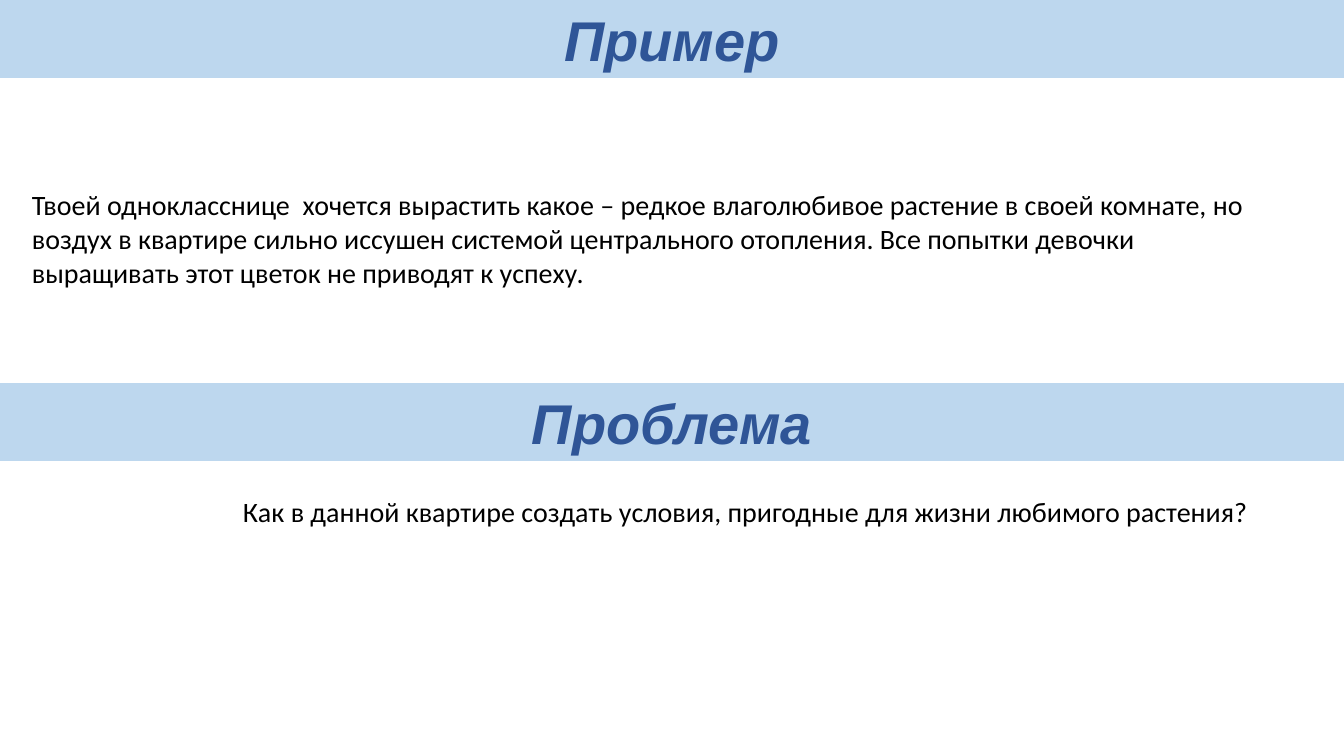
"""Build a slide with an example and the problem it poses."""
from dataclasses import dataclass

from pptx import Presentation
from pptx.dml.color import RGBColor
from pptx.enum.shapes import MSO_SHAPE
from pptx.enum.text import MSO_ANCHOR, PP_ALIGN
from pptx.util import Emu, Pt

SECTIONS = [
    {
        "heading": "Пример",
        "top": 0,
        "body": "Твоей однокласснице  хочется вырастить какое – редкое влаголюбивое "
                "растение в своей комнате, но воздух в квартире сильно иссушен системой "
                "центрального отопления. Все попытки девочки выращивать этот цветок "
                "не приводят к успеху.",
        "box": (22, 183, 1273, 112),
        "wrap": True,
    },
    {
        "heading": "Проблема",
        "top": 383,
        "body": "Как в данной квартире создать условия, пригодные для жизни "
                "любимого растения?",
        "box": (233, 490, 1033, 44),
        "wrap": False,
    },
]

SLIDE_WIDTH, SLIDE_HEIGHT = 1344, 756
BAND_HEIGHT = 78
EMU_PER_PX = 12192000 / SLIDE_WIDTH
BLANK_LAYOUT = 6
RECTANGLE = MSO_SHAPE.RECTANGLE
LEFT, CENTER = PP_ALIGN.LEFT, PP_ALIGN.CENTER
TOP, MIDDLE = MSO_ANCHOR.TOP, MSO_ANCHOR.MIDDLE


@dataclass(frozen=True)
class Theme:
    """Colours, fonts and type sizes."""
    band: RGBColor = RGBColor.from_string("BDD7EE")
    heading: RGBColor = RGBColor.from_string("2F5597")
    body: RGBColor = RGBColor.from_string("000000")
    heading_font: str = "Arial"
    body_font: str = "Calibri"
    heading_size: int = 40
    body_size: int = 20


THEME = Theme()


def px(length):
    """Turn pixels into EMU."""
    return Emu(round(length * EMU_PER_PX))


def write_text(shape, text, *, font, size, color, bold=False, italic=False,
               align=LEFT, anchor=TOP, wrap=True):
    """Put one formatted paragraph into a shape."""
    frame = shape.text_frame
    frame.word_wrap = wrap
    frame.vertical_anchor = anchor
    paragraph = frame.paragraphs[0]
    paragraph.alignment = align
    run = paragraph.add_run()
    run.text = text
    run.font.name = font
    run.font.size = Pt(size)
    run.font.bold = bold
    run.font.italic = italic
    run.font.color.rgb = color


def add_band(slide, heading, top):
    """Add a full-width heading band."""
    band = slide.shapes.add_shape(RECTANGLE, 0, px(top), px(SLIDE_WIDTH), px(BAND_HEIGHT))
    band.shadow.inherit = False
    band.fill.solid()
    band.fill.fore_color.rgb = THEME.band
    band.line.fill.background()
    write_text(band, heading, font=THEME.heading_font, size=THEME.heading_size,
               color=THEME.heading, bold=True, italic=True, align=CENTER, anchor=MIDDLE)


def main():
    """Build and save the presentation."""
    presentation = Presentation()
    presentation.slide_width = px(SLIDE_WIDTH)
    presentation.slide_height = px(SLIDE_HEIGHT)
    slide = presentation.slides.add_slide(presentation.slide_layouts[BLANK_LAYOUT])
    for section in SECTIONS:
        add_band(slide, section["heading"], section["top"])
        body = slide.shapes.add_textbox(*map(px, section["box"]))
        write_text(body, section["body"], font=THEME.body_font, size=THEME.body_size,
                   color=THEME.body, wrap=section["wrap"])
    presentation.save("out.pptx")


if __name__ == "__main__":
    main()
